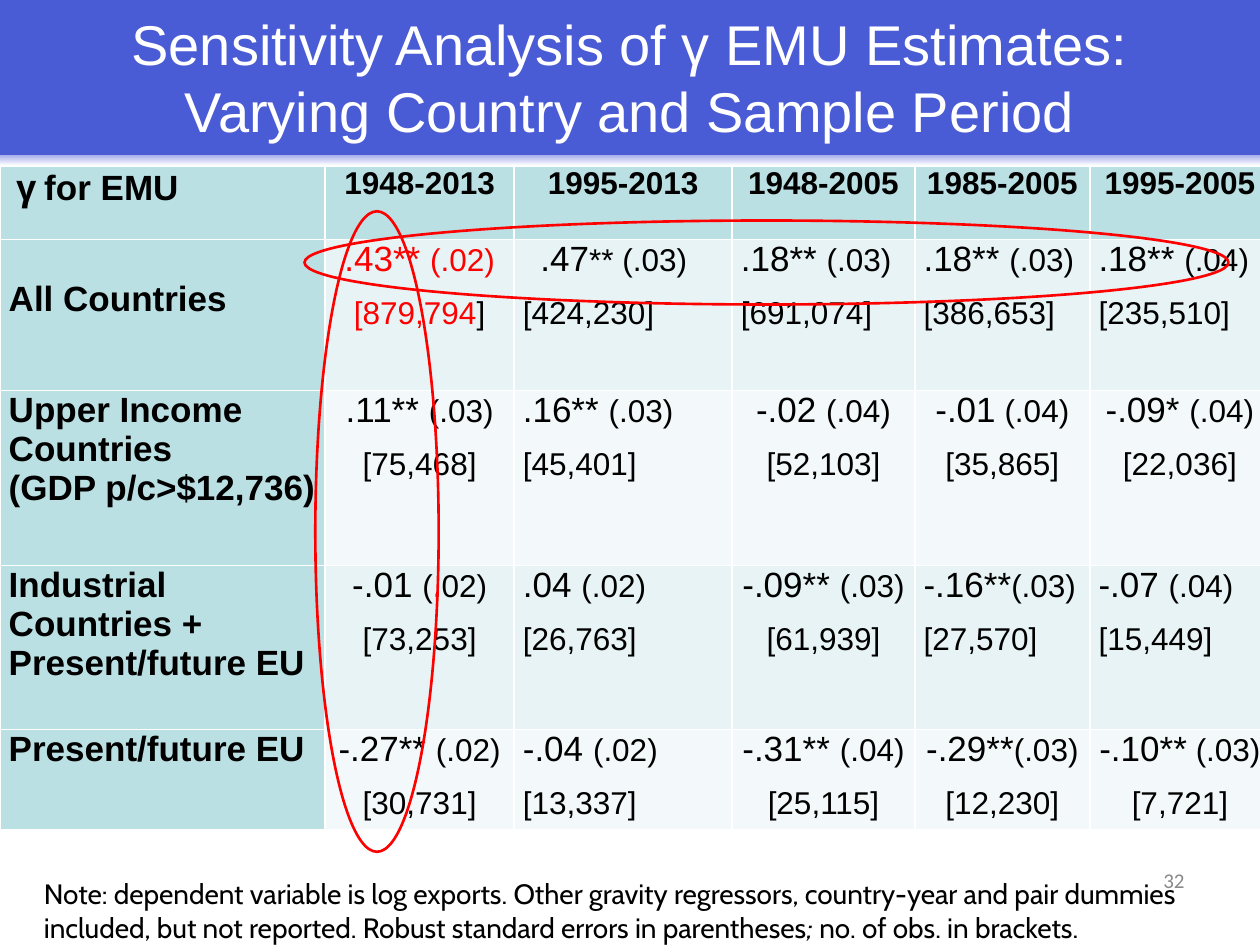
"""Build the slide on the sensitivity of the EMU estimates."""
import pptx
import pptx.dml.color
import pptx.enum.shapes
import pptx.enum.text
import pptx.util

Pt = pptx.util.Pt
RGB = pptx.dml.color.RGBColor
Align = pptx.enum.text.PP_ALIGN
Shape = pptx.enum.shapes.MSO_SHAPE

WHITE = RGB(0xFF, 0xFF, 0xFF)
BLACK = RGB(0, 0, 0)
RED = RGB(0xFF, 0, 0)
BLUE = RGB(0x4A, 0x5B, 0xD6)
HAZE = RGB(0xA4, 0xAC, 0xEA)
GREY = RGB(0x89, 0x89, 0x89)
TEAL = RGB(0xBB, 0xE0, 0xE3)
BANDS = RGB(0xE7, 0xF3, 0xF4), RGB(0xF3, 0xF9, 0xFA)

SIDES = {"l": Align.LEFT, "c": Align.CENTER, "r": Align.RIGHT}
WIDTHS = 185.8, 108, 124.6, 104.4, 100, 103
HEIGHTS = 41.8, 86.4, 100, 93.6, 57.6
YEARS = "1948-2013", "1995-2013", "1948-2005", "1985-2005", "1995-2005"
ROWS = [
    (["All Countries"], "cllll",
     [(".43** |(.02)", "879,794"), (".47|** (.03)", "424,230"),
      (".18** |(.03)", "691,074"), (".18** |(.03)", "386,653"),
      (".18** |(.04)", "235,510")]),
    (["Upper Income Countries", "(GDP p/c>$12,736)"], "clccc",
     [(".11** |(.03)", "75,468"), (".16** |(.03)", "45,401"),
      ("-.02 |(.04)", "52,103"), ("-.01| (.04)", "35,865"),
      ("-.09* |(.04)", "22,036")]),
    (["Industrial", "Countries + Present/future EU"], "clcll",
     [("-.01 |(.02)", "73,253"), (".04 |(.02)", "26,763"),
      ("-.09** |(.03)", "61,939"), ("-.16**|(.03)", "27,570"),
      ("-.07 |(.04)", "15,449")]),
    (["Present/future EU"], "clccc",
     [("-.27** |(.02)", "30,731"), ("-.04 |(.02)", "13,337"),
      ("-.31** |(.04)", "25,115"), ("-.29**|(.03)", "12,230"),
      ("-.10**| (.03)", "7,721")]),
]


class Deck:
    """Hold the style and the current slide."""

    def __init__(self):
        self.show = pptx.Presentation()
        self.show.slide_width, self.show.slide_height = Pt(720), Pt(540)
        self.slide = self.show.slides.add_slide(self.show.slide_layouts[5])
        self.face = "Arial"

    def style(self, para, size, color=BLACK, side="l", face=None, bold=False):
        para.alignment = SIDES[side]
        font = para.font
        font.name, font.size, font.bold = face or self.face, Pt(size), bold
        font.color.rgb = color

    def title(self, text, *box):
        shape = self.slide.shapes.title
        shape.left, shape.top, shape.width, shape.height = map(Pt, box)
        shape.fill.solid()
        shape.fill.fore_color.rgb = BLUE
        frame = shape.text_frame
        frame.text = text
        frame.auto_size = pptx.enum.text.MSO_AUTO_SIZE.NONE
        frame.vertical_anchor = pptx.enum.text.MSO_ANCHOR.MIDDLE
        self.style(frame.paragraphs[0], 32, WHITE, "c")

    def shade(self, *box):
        shape = self.slide.shapes.add_shape(Shape.RECTANGLE, *map(Pt, box))
        shape.shadow.inherit = False
        shape.line.fill.background()
        shape.fill.gradient()
        shape.fill.gradient_angle = 270
        for stop, color in zip(shape.fill.gradient_stops, (HAZE, WHITE)):
            stop.color.rgb = color

    def text(self, parts, box, size, **style):
        frame = self.slide.shapes.add_textbox(*map(Pt, box)).text_frame
        frame.word_wrap = True
        para = frame.paragraphs[0]
        self.style(para, size, **style)
        for part in parts:
            para.add_run().text = part
        return para

    def ring(self, *box, turn=0):
        shape = self.slide.shapes.add_shape(Shape.OVAL, *map(Pt, box))
        shape.shadow.inherit = False
        shape.fill.background()
        shape.line.color.rgb, shape.line.width = RED, Pt(1.5)
        shape.rotation = turn

    def cell(self, cell, fill, count=1):
        cell.fill.solid()
        cell.fill.fore_color.rgb = fill
        cell.margin_left = cell.margin_right = Pt(5)
        cell.margin_top = cell.margin_bottom = 0
        for _ in range(count - 1):
            cell.text_frame.add_paragraph()
        return cell.text_frame.paragraphs

    def label(self, cell, lines):
        for para, line in zip(self.cell(cell, TEAL, len(lines)), lines):
            para.text = line
            self.style(para, 20, bold=True)

    def value(self, cell, fill, pair, side, color):
        top, low = self.cell(cell, fill, 2)
        for para in (top, low):
            self.style(para, 18, color, side)
            para.space_before = Pt(10)
        big, small = pair[0].split("|")
        run = top.add_run()
        run.text, run.font.size = big, Pt(20)
        top.add_run().text = small
        low.add_run().text = "[" + pair[1]
        end = low.add_run()
        end.text, end.font.color.rgb = "]", BLACK

    def table(self, left, top):
        shape = self.slide.shapes.add_table(
            len(HEIGHTS), len(WIDTHS), Pt(left), Pt(top),
            Pt(sum(WIDTHS)), Pt(sum(HEIGHTS)))
        grid = shape.table
        for col, width in zip(grid.columns, WIDTHS):
            col.width = Pt(width)
        for row, height in zip(grid.rows, HEIGHTS):
            row.height = Pt(height)
        head = self.cell(grid.cell(0, 0), TEAL)[0]
        self.style(head, 20, bold=True)
        head._p.get_or_add_pPr().set("marL", str(Pt(4.4)))
        gamma = head.add_run()
        gamma.text, gamma.font.name = "γ ", "Cabin"
        head.add_run().text = "for EMU"
        for col, years in enumerate(YEARS, 1):
            para = self.cell(grid.cell(0, col), TEAL)[0]
            para.text = years
            self.style(para, 18, side="c", bold=True)
        for row, (lines, sides, pairs) in enumerate(ROWS, 1):
            self.label(grid.cell(row, 0), lines)
            fill = BANDS[(row - 1) % 2]
            for col, (side, pair) in enumerate(zip(sides, pairs), 1):
                color = RED if row == col == 1 else BLACK
                self.value(grid.cell(row, col), fill, pair, side, color)
        grid.cell(1, 0).margin_top = Pt(23)
        inset = grid.cell(1, 2).text_frame.paragraphs[0]
        inset._p.get_or_add_pPr().set("marL", str(Pt(10)))


def main():
    deck = Deck()
    deck.title("Sensitivity Analysis of γ EMU Estimates:\v"
               "Varying Country and Sample Period", 0, -1.4, 720, 90)
    deck.shade(0, 88.6, 720, 6)
    deck.text(["32"], (516, 492, 168, 37), 12,
              color=GREY, side="r", face="Calibri")
    deck.table(0, 95)
    note = deck.text(
        ["Note: dependent variable is log exports. Other gravity regressors, "
         "country-year and pair dummies included, but not reported. Robust "
         "standard errors in parentheses", "; ", "no. of obs. in brackets."],
        (18, 497.5, 708, 46), 16, face="Cabin")
    note.runs[1].font.italic = True
    deck.ring(174, 126, 528, 48)
    deck.ring(32.4, 268.5, 366, 70.5, turn=90)
    deck.show.save("out.pptx")


if __name__ == "__main__":
    main()
